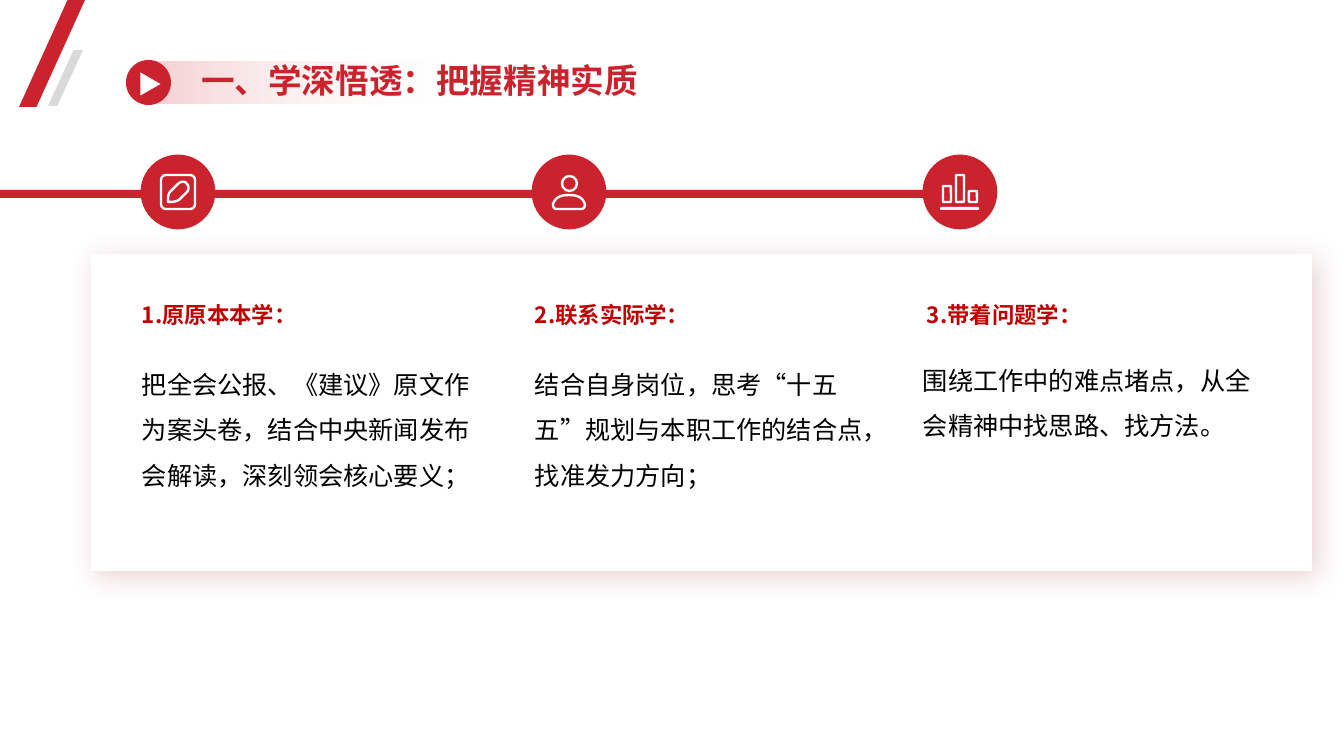
"""Build a slide with three study methods along a timeline."""
from lxml import etree
from pptx import Presentation
from pptx.dml.color import RGBColor
from pptx.enum.shapes import MSO_SHAPE
from pptx.enum.text import MSO_ANCHOR, MSO_AUTO_SIZE, PP_ALIGN
from pptx.oxml.ns import qn
from pptx.util import Emu, Pt

TITLE = "一、学深悟透：把握精神实质"
COLUMNS = [
    {"heading": "1.原原本本学：", "heading_left": 142, "body_left": 142, "body_top": 354,
     "body": "把全会公报、《建议》原文作为案头卷，结合中央新闻发布会解读，深刻领会核心要义；"},
    {"heading": "2.联系实际学：", "heading_left": 535, "body_left": 535, "body_top": 354,
     "body": "结合自身岗位，思考“十五五”规划与本职工作的结合点，找准发力方向；"},
    {"heading": "3.带着问题学：", "heading_left": 927, "body_left": 923, "body_top": 350,
     "body": "围绕工作中的难点堵点，从全会精神中找思路、找方法。"},
]
PEN_CURVES = [
    [(-10, 10), (-10, 6), (-10, 1), (-7, -1)],
    [(0, -8), (3, -11), (7, -11), (9, -8)],
    [(9, -8), (11, -6), (11, -2), (9, 0)],
    [(2, 7), (-1, 10), (-6, 10), (-10, 10)],
]
SHOULDER_CURVES = [
    [(0, 3), (11, 3), (14, 7), (16, 12)],
    [(16, 12), (16, 15), (15, 17), (12, 17)],
    [(-12, 17), (-15, 17), (-16, 15), (-16, 12)],
    [(-16, 12), (-14, 7), (-11, 3), (0, 3)],
]
BAR_HEIGHTS = [16, 27, 11]

RED = RGBColor(0xCB, 0x23, 0x2D)
DARK_RED = RGBColor(0xC0, 0x00, 0x00)
PINK = RGBColor(0xF7, 0xD1, 0xD3)
CREAM = RGBColor(0xFB, 0xFA, 0xF8)
GREY = RGBColor(0xD9, 0xD9, 0xD9)
WHITE = RGBColor(0xFF, 0xFF, 0xFF)
BLACK = RGBColor(0x00, 0x00, 0x00)
FONT = "Noto Sans CJK SC"
TOP, MIDDLE = MSO_ANCHOR.TOP, MSO_ANCHOR.MIDDLE
LEFT, NO_AUTOFIT = PP_ALIGN.LEFT, MSO_AUTO_SIZE.NONE
RECTANGLE, ROUNDED = MSO_SHAPE.RECTANGLE, MSO_SHAPE.ROUNDED_RECTANGLE
OVAL, TRIANGLE = MSO_SHAPE.OVAL, MSO_SHAPE.ISOSCELES_TRIANGLE
PARALLELOGRAM = MSO_SHAPE.PARALLELOGRAM

EMU_PER_PX = 914400 / 100.8
CIRCLE_LEFT, CIRCLE_TOP, CIRCLE_SIZE, CIRCLE_PITCH = 142, 156, 72, 391
CURVE_STEPS = 8
ICON_LINE = 1.7


def px(length):
    return Emu(round(length * EMU_PER_PX))


def paint(shape, fill=None, line=None, line_width=ICON_LINE):
    shape.shadow.inherit = False
    if fill is None:
        shape.fill.background()
    else:
        shape.fill.solid()
        shape.fill.fore_color.rgb = fill
    if line is None:
        shape.line.fill.background()
    else:
        shape.line.color.rgb = line
        shape.line.width = Pt(line_width)


def add_part(slide, kind, box, adjustment=None, **colors):
    shape = slide.shapes.add_shape(kind, *map(px, box))
    if adjustment is not None:
        shape.adjustments[0] = adjustment
    paint(shape, **colors)
    return shape


def add_outline(slide, center_x, center_y, curves):
    points = []
    for curve in curves:
        for step in range(CURVE_STEPS + 1):
            t = step / CURVE_STEPS
            weights = ((1 - t) ** 3, 3 * t * (1 - t) ** 2, 3 * t * t * (1 - t), t ** 3)
            x, y = (sum(w * point[axis] for w, point in zip(weights, curve)) for axis in (0, 1))
            points.append((px(center_x + x), px(center_y + y)))
    builder = slide.shapes.build_freeform(*points[0])
    builder.add_line_segments(points[1:], close=True)
    paint(builder.convert_to_shape(), line=WHITE)


def write(paragraph, text, size, color, bold=False):
    run = paragraph.add_run()
    run.text = text
    run.font.size = Pt(size)
    run.font.bold = bold
    run.font.color.rgb = color
    run.font.name = FONT
    etree.SubElement(run.font._element, qn("a:ea"), typeface=FONT)


def add_text(slide, box, text, size, color, spacing, anchor, bold=False):
    frame = slide.shapes.add_textbox(*map(px, box)).text_frame
    frame.margin_left = frame.margin_right = frame.margin_top = frame.margin_bottom = 0
    frame.word_wrap = True
    frame.vertical_anchor = anchor
    paragraph = frame.paragraphs[0]
    paragraph.line_spacing = spacing
    write(paragraph, text, size, color, bold)


def add_header(slide):
    add_part(slide, PARALLELOGRAM, (19, 0, 66, 107), 0.735, fill=RED)
    add_part(slide, PARALLELOGRAM, (48, 50, 35, 56), 0.735, fill=GREY)
    band = add_part(slide, ROUNDED, (150, 62, 306, 42), 0.083)
    band.fill.gradient()
    band.fill.gradient_angle = 0
    for stop, color, position in zip(band.fill.gradient_stops, (PINK, CREAM), (0, 1)):
        stop.color.rgb = color
        stop.position = position
    last_color = band._element.xpath(".//a:gs/a:srgbClr")[-1]
    etree.SubElement(last_color, qn("a:alpha"), val="0")

    title = slide.shapes.title
    title.left, title.top, title.width, title.height = map(px, (191, 55, 480, 50))
    frame = title.text_frame
    frame.word_wrap = True
    frame.auto_size = NO_AUTOFIT
    frame.vertical_anchor = TOP
    frame.paragraphs[0].alignment = LEFT
    write(frame.paragraphs[0], TITLE, 24, RED, True)
    band._element.addnext(title._element)

    add_part(slide, OVAL, (126, 60, 45, 45), fill=RED)
    add_part(slide, TRIANGLE, (139, 74, 23, 20), fill=WHITE).rotation = 90


def add_card(slide):
    card = add_part(slide, RECTANGLE, (91, 254, 1221, 317), fill=WHITE)
    effects = card._element.spPr.find(qn("a:effectLst"))
    shadow = etree.SubElement(effects, qn("a:outerShdw"), blurRad=str(Pt(20)),
                              dist=str(Pt(6)), dir="2700000", algn="tl", rotWithShape="0")
    color = etree.SubElement(shadow, qn("a:srgbClr"), val="981A22")
    etree.SubElement(color, qn("a:alpha"), val="20000")


def add_pen(slide, x, y):
    add_part(slide, ROUNDED, (x - 17, y - 17, 34, 34), 0.14, line=WHITE)
    add_outline(slide, x, y, PEN_CURVES)


def add_person(slide, x, y):
    add_part(slide, OVAL, (x - 7, y - 16, 15, 15), line=WHITE)
    add_outline(slide, x, y, SHOULDER_CURVES)


def add_bars(slide, x, y):
    for index, height in enumerate(BAR_HEIGHTS):
        add_part(slide, ROUNDED, (x - 17 + 13 * index, y + 10 - height, 8, height), 0.1, line=WHITE)
    add_part(slide, ROUNDED, (x - 20, y + 15, 39, 3), 0.5, fill=WHITE)


def main():
    presentation = Presentation()
    presentation.slide_width, presentation.slide_height = px(1344), px(756)
    slide = presentation.slides.add_slide(presentation.slide_layouts[5])
    add_header(slide)
    add_card(slide)
    add_part(slide, RECTANGLE, (0, 190, 974, 8), fill=RED)
    for index, (column, add_icon) in enumerate(zip(COLUMNS, (add_pen, add_person, add_bars))):
        left = CIRCLE_LEFT + index * CIRCLE_PITCH
        add_part(slide, OVAL, (left, CIRCLE_TOP, CIRCLE_SIZE, CIRCLE_SIZE),
                 fill=RED, line=RED, line_width=2)
        add_icon(slide, left + CIRCLE_SIZE // 2, CIRCLE_TOP + CIRCLE_SIZE // 2)
        add_text(slide, (column["heading_left"], 280, 338, 64), column["heading"],
                 16, DARK_RED, 1.2, MIDDLE, True)
        add_text(slide, (column["body_left"], column["body_top"], 338, 183), column["body"],
                 18, BLACK, 1.5, TOP)
    presentation.save("out.pptx")


if __name__ == "__main__":
    main()
